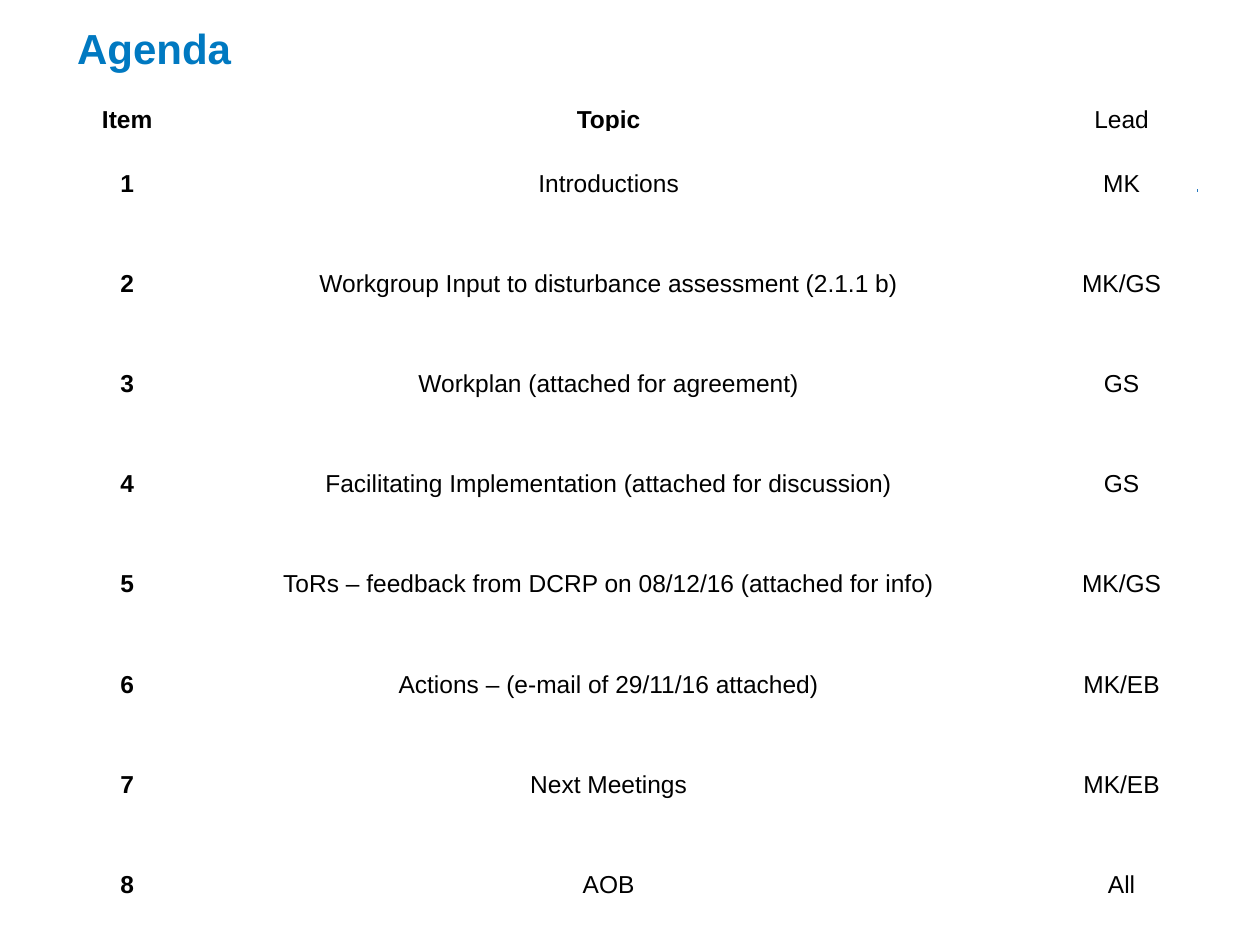
from dataclasses import dataclass

from lxml import etree
from pptx import Presentation
from pptx import util as u
from pptx.dml.color import RGBColor
from pptx.enum import shapes, text
from pptx.oxml import ns


@dataclass(frozen=True)
class Theme:
    face: str = "Arial"
    head: str = "0079C1"
    rule: str = "2478C0"
    ink: str = "000000"
    paper: str = "FFFFFF"
    big: int = 24
    body: int = 14
    thin: int = 1
    thick: int = 3


ROWS = [
    ("Item", "Topic", "Lead"),
    ("1", "Introductions", "MK"),
    ("2", "Workgroup Input to disturbance assessment (2.1.1 b)", "MK/GS"),
    ("3", "Workplan (attached for agreement)", "GS"),
    ("4", "Facilitating Implementation (attached for discussion)", "GS"),
    ("5", "ToRs – feedback from DCRP on 08/12/16 (attached for info)", "MK/GS"),
    ("6", "Actions – (e-mail of 29/11/16 attached)", "MK/EB"),
    ("7", "Next Meetings", "MK/EB"),
    ("8", "AOB", "All"),
]
COLS = (1.73, 17.68, 3)
HEAD, STEP = 0.56, 2.02


class Deck:
    def __init__(self, theme, slide):
        self.theme = theme
        self.slide = slide

    def style(self, frame, size, color, bold):
        for para in frame.paragraphs:
            for run in para.runs:
                font = run.font
                font.name, font.size, font.bold = self.theme.face, u.Pt(size), bold
                font.color.rgb = RGBColor.from_string(color)

    def title(self, words, left, top, width, height):
        shape = self.slide.shapes.title
        shape.left, shape.top = u.Cm(left), u.Cm(top)
        shape.width, shape.height = u.Cm(width), u.Cm(height)
        frame = shape.text_frame
        frame.text = words
        frame.vertical_anchor = text.MSO_ANCHOR.BOTTOM
        frame.paragraphs[0].alignment = text.PP_ALIGN.LEFT
        self.style(frame, self.theme.big, self.theme.head, True)

    def line(self, left, right, top):
        rule = self.slide.shapes.add_connector(
            shapes.MSO_CONNECTOR.STRAIGHT, u.Cm(left), u.Cm(top), u.Cm(right), u.Cm(top))
        rule.line.color.rgb = RGBColor.from_string(self.theme.rule)
        rule.line.width = u.Pt(1.5)
        etree.SubElement(rule._element.spPr, ns.qn("a:effectLst"))

    def edge(self, cell, sides):
        props = cell._tc.get_or_add_tcPr()
        for spot, (side, width) in enumerate(sides.items()):
            ln = etree.Element(ns.qn(f"a:ln{side}"), w=str(u.Pt(width)))
            fill = etree.SubElement(ln, ns.qn("a:solidFill"))
            etree.SubElement(fill, ns.qn("a:srgbClr"), val=self.theme.paper)
            props.insert(spot, ln)

    def cell(self, cell, words, bold, top, base):
        cell.margin_left = cell.margin_right = u.Cm(0.19)
        cell.margin_top = cell.margin_bottom = 0
        cell.vertical_anchor = text.MSO_ANCHOR.MIDDLE
        cell.fill.solid()
        cell.fill.fore_color.rgb = RGBColor.from_string(self.theme.paper)
        frame = cell.text_frame
        frame.text = words
        frame.paragraphs[0].alignment = text.PP_ALIGN.CENTER
        self.style(frame, self.theme.body, self.theme.ink, bold)
        thin = self.theme.thin
        self.edge(cell, {"L": thin, "R": thin, "T": top, "B": base})

    def table(self, rows, left, top):
        last = len(rows) - 1
        grid = self.slide.shapes.add_table(
            len(rows), len(COLS), u.Cm(left), u.Cm(top),
            u.Cm(sum(COLS)), u.Cm(HEAD + STEP * last)).table
        for col, width in zip(grid.columns, COLS):
            col.width = u.Cm(width)
        thin, thick = self.theme.thin, self.theme.thick
        for r, row in enumerate(rows):
            grid.rows[r].height = u.Cm(STEP if r else HEAD)
            over = thick if r in (1, last) else thin
            under = thick if r in (0, last - 1) else thin
            for c, words in enumerate(row):
                bold = c == 0 or (r == 0 and c == 1)
                self.cell(grid.cell(r, c), words, bold, over, under)


def main():
    prs = Presentation()
    prs.slide_width, prs.slide_height = u.Cm(25.4), u.Cm(19.05)
    deck = Deck(Theme(), prs.slides.add_slide(prs.slide_layouts[5]))
    deck.title("Agenda", 1.3, 0.33, 22.86, 1.27)
    deck.line(1.96, 24.16, 3.84)
    deck.table(ROWS, 1.7, 2.13)
    prs.save("out.pptx")


if __name__ == "__main__":
    main()
